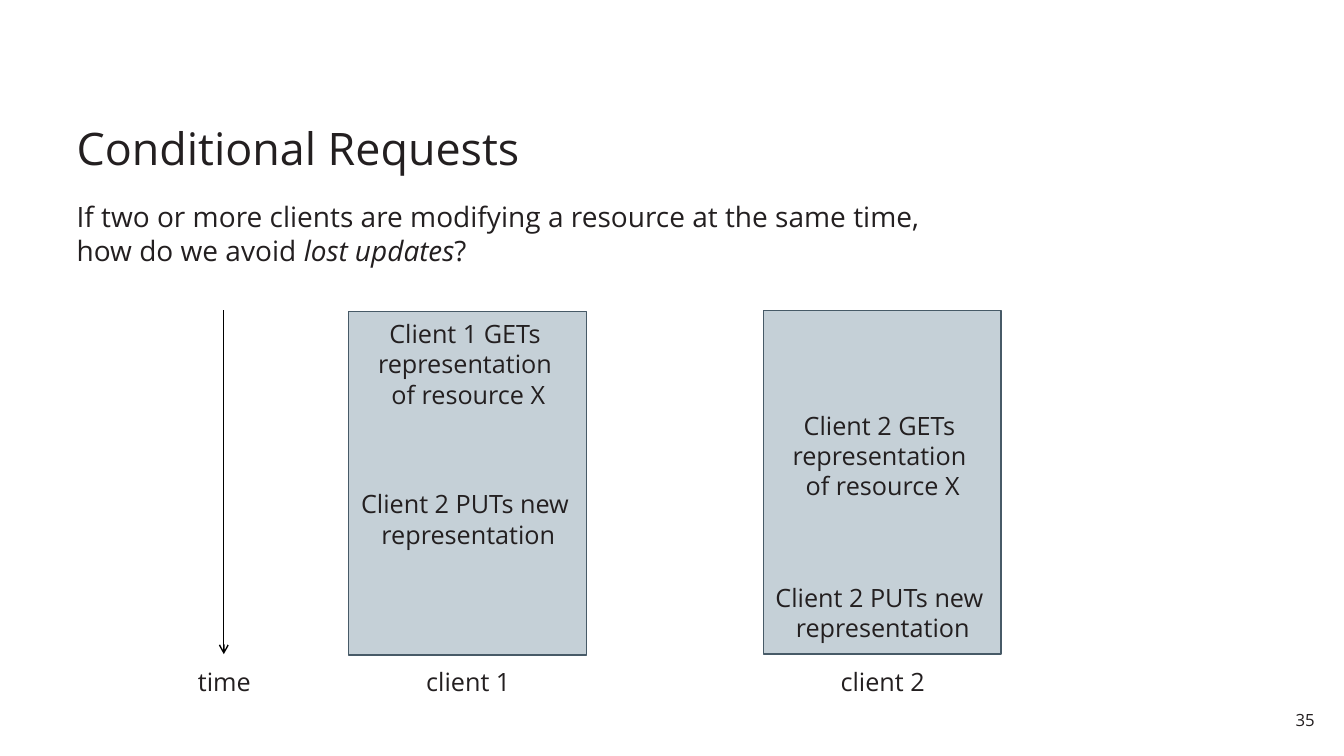
import pptx
import pptx.util
import pptx.dml.color
import pptx.enum.shapes
import pptx.enum.text
import lxml.etree
from dataclasses import dataclass

PX = 9144  # EMU per px, 100 px to the inch
ALIGN = pptx.enum.text.PP_ALIGN
ANCHOR = pptx.enum.text.MSO_ANCHOR


@dataclass(frozen=True)
class Theme:
    font: str = "Open Sans"
    ink: str = "231F20"
    fill: str = "C5D0D7"
    edge: str = "475A67"
    black: str = "000000"
    title: int = 32
    body: int = 20
    label: int = 18
    number: int = 12


THEME = Theme()


def px(*sizes):
    return [pptx.util.Emu(size * PX) for size in sizes]


def color(code):
    return pptx.dml.color.RGBColor.from_string(code)


def add_text(slide, area, lines, size, align=ALIGN.LEFT, anchor=ANCHOR.TOP,
             inset=(8, 4), wrap=True):
    """Each line is a list of (text, italic) runs."""
    box = slide.shapes.add_textbox(*px(*area))
    frame = box.text_frame
    frame.word_wrap = wrap
    frame.vertical_anchor = anchor
    frame.margin_left = frame.margin_right = px(inset[0])[0]
    frame.margin_top = frame.margin_bottom = px(inset[1])[0]
    para = frame.paragraphs[0]
    para.alignment = align
    for index, runs in enumerate(lines):
        if index:
            para.add_line_break()
        for text, italic in runs:
            run = para.add_run()
            run.text = text
            run.font.name = THEME.font
            run.font.size = pptx.util.Pt(size)
            run.font.italic = italic
            run.font.color.rgb = color(THEME.ink)
    return para


def add_label(slide, mid, top, width, *lines):
    """Label centred on mid."""
    height = 10 + 30 * len(lines)
    add_text(slide, (mid - width // 2, top, width, height),
             [[(line, False)] for line in lines], THEME.label,
             align=ALIGN.CENTER, inset=(10, 5), wrap=False)


def add_bar(slide, mid, top):
    width, height = 236, 341
    bar = slide.shapes.add_shape(
        pptx.enum.shapes.MSO_SHAPE.RECTANGLE,
        *px(mid - width // 2, top, width, height))
    bar.shadow.inherit = False
    bar.fill.solid()
    bar.fill.fore_color.rgb = color(THEME.fill)
    bar.line.color.rgb = color(THEME.edge)
    bar.line.width = pptx.util.Pt(1)


def add_arrow(slide, *ends):
    arrow = slide.shapes.add_connector(
        pptx.enum.shapes.MSO_CONNECTOR.STRAIGHT, *px(*ends))
    arrow.line.color.rgb = color(THEME.black)
    arrow.line.width = pptx.util.Pt(1)
    name = pptx.oxml.ns.qn
    line = arrow.line._get_or_add_ln()
    lxml.etree.SubElement(line, name("a:tailEnd"), type="arrow")
    lxml.etree.SubElement(arrow._element.spPr, name("a:effectLst"))


def add_client(slide, number, mid, top, get_top, put_top):
    add_bar(slide, mid, top)
    add_label(slide, mid, get_top, 207,
              f"Client {number} GETs ", "representation ", "of resource X")
    add_label(slide, mid, put_top, 249,
              "Client 2 PUTs new ", "representation")
    add_label(slide, mid, 656, 111, f"client {number}")


def main():
    deck = pptx.Presentation()
    deck.slide_width, deck.slide_height = px(1333, 750)
    slide = deck.slides.add_slide(deck.slide_layouts[6])

    # Heading and question
    title = add_text(slide, (68, 76, 1197, 102),
                     [[("Conditional Requests", False)]],
                     THEME.title, anchor=ANCHOR.BOTTOM)
    title.line_spacing = 0.9
    add_text(slide, (68, 194, 1197, 118), [
        [("If two or more clients are modifying a resource "
          "at the same time, ", False)],
        [("how do we avoid ", False), ("lost updates", True), ("?", False)],
    ], THEME.body)

    # Time axis
    add_arrow(slide, 222, 308, 222, 649)
    add_label(slide, 222, 656, 75, "time")

    # Clients
    add_client(slide, 1, 464, 309, 311, 480)
    add_client(slide, 2, 875, 308, 402, 573)

    # Slide number
    add_text(slide, (1265, 698, 47, 31), [[("35", False)]], THEME.number,
             align=ALIGN.RIGHT, inset=(8, 6))

    deck.save("out.pptx")


if __name__ == "__main__":
    main()
